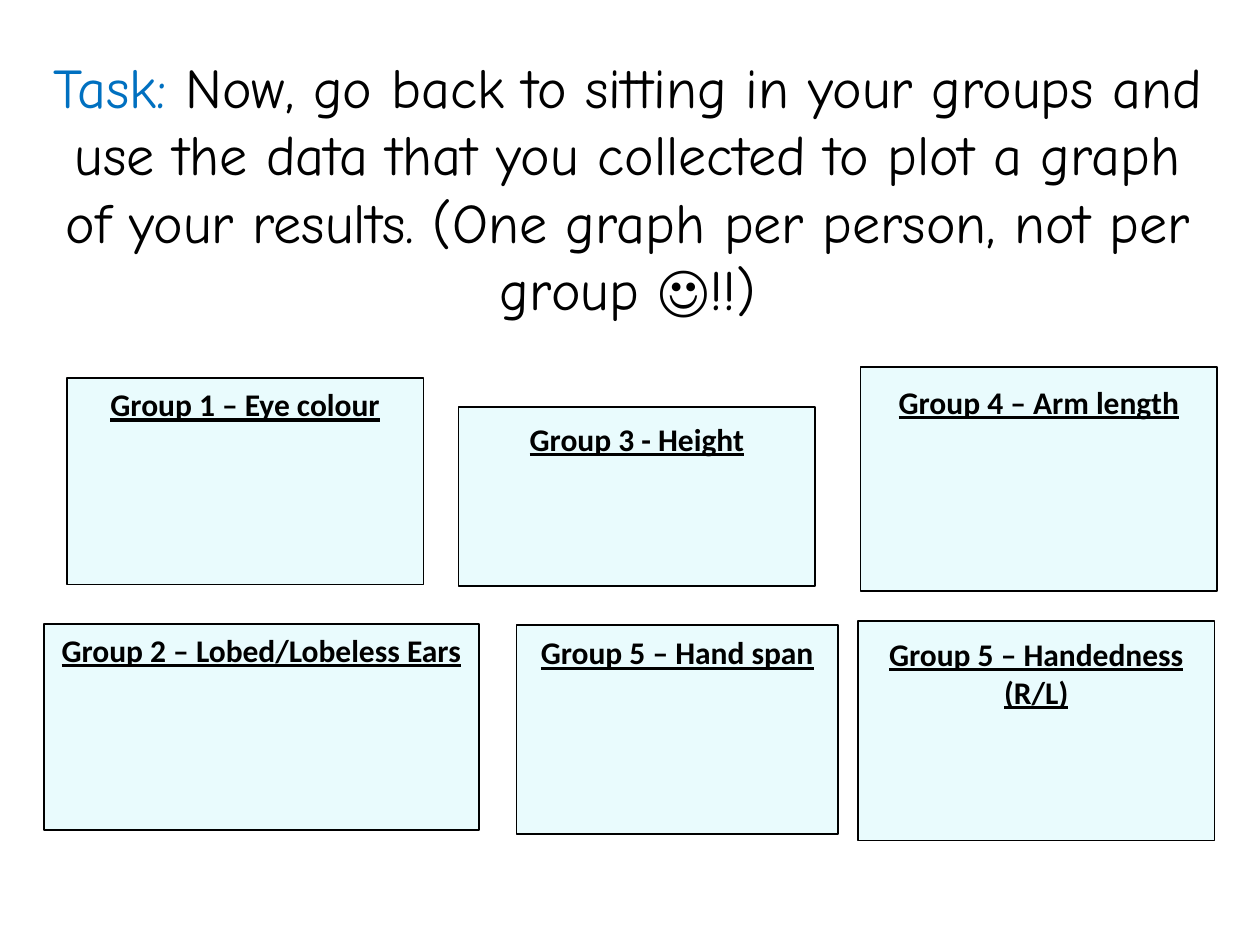
from pptx import Presentation
from pptx.dml.color import RGBColor
from pptx.enum.shapes import MSO_SHAPE
from pptx.enum.text import MSO_ANCHOR, PP_ALIGN
from pptx.util import Pt

RECTANGLE = MSO_SHAPE.RECTANGLE
TOP = MSO_ANCHOR.TOP
CENTER = PP_ALIGN.CENTER

BLACK = "000000"
BLUE = "0070C0"
PALE_CYAN = "E9FBFD"

TASK_FORMAT = {"name": "Comic Neue", "size": Pt(32)}
HEADING_FORMAT = {"name": "Calibri", "size": Pt(18), "bold": True, "underline": True}

TASK_PARTS = [
    ("Task: ", BLUE),
    ("Now, go back to sitting in your groups and use the data that you collected "
     "to plot a graph of your results. (One graph per person, not per group ☺!!)", BLACK),
]

# heading, left, top, width, height, space above heading
GROUPS = [
    ("Group 1 – Eye colour", 38.2, 216, 203.8, 118.1, 4.1),
    ("Group 2 – Lobed/Lobeless Ears", 25.2, 356.4, 248.4, 118.1, 4.1),
    ("Group 3 - Height", 262.1, 232.6, 203.8, 102.2, 7.2),
    ("Group 4 – Arm length", 491.8, 209.5, 203.8, 128.2, 9.1),
    ("Group 5 – Handedness (R/L)", 490.3, 355, 203.8, 125.3, 7.7),
    ("Group 5 – Hand span", 295.2, 357.1, 183.6, 119.5, 4.8),
]


def color(hex_value):
    return RGBColor.from_string(hex_value)


def write_centered(frame, parts, font_format):
    frame.word_wrap = True
    frame.vertical_anchor = TOP
    paragraph = frame.paragraphs[0]
    paragraph.alignment = CENTER
    for text, hex_value in parts:
        run = paragraph.add_run()
        run.text = text
        run.font.color.rgb = color(hex_value)
        for attribute, value in font_format.items():
            setattr(run.font, attribute, value)


def add_task(slide):
    task = slide.shapes.add_textbox(Pt(18.7), Pt(26.6), Pt(680.4), Pt(162.7))
    write_centered(task.text_frame, TASK_PARTS, TASK_FORMAT)


def add_group(slide, heading, left, top, width, height, space_above):
    group_box = slide.shapes.add_shape(RECTANGLE, Pt(left), Pt(top), Pt(width), Pt(height))
    group_box.shadow.inherit = False
    group_box.fill.solid()
    group_box.fill.fore_color.rgb = color(PALE_CYAN)
    group_box.line.color.rgb = color(BLACK)
    group_box.line.width = Pt(1)
    group_box.text_frame.margin_top = Pt(space_above)
    write_centered(group_box.text_frame, [(heading, BLACK)], HEADING_FORMAT)


def main():
    presentation = Presentation()
    presentation.slide_width = Pt(720)
    presentation.slide_height = Pt(540)
    slide = presentation.slides.add_slide(presentation.slide_layouts[6])
    for group in GROUPS:
        add_group(slide, *group)
    add_task(slide)
    presentation.save("out.pptx")


if __name__ == "__main__":
    main()
